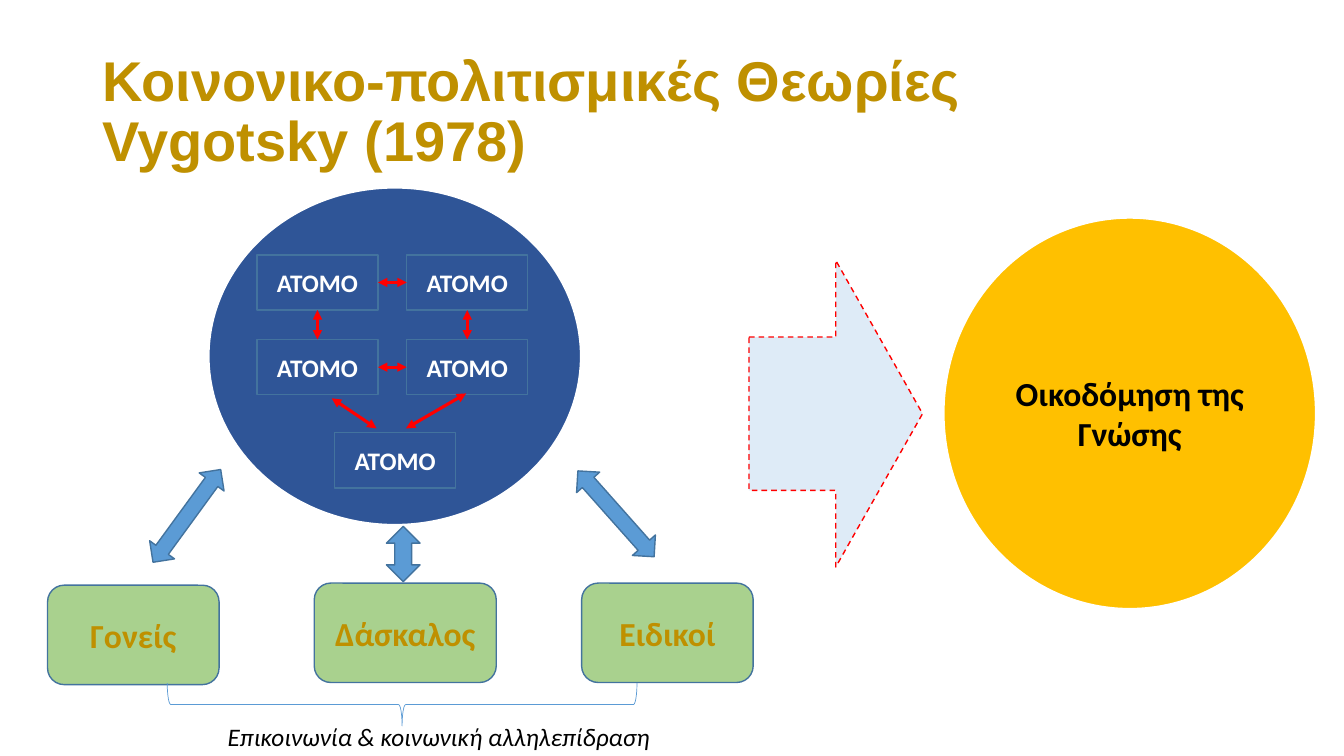
from lxml.etree import SubElement
from pptx import Presentation
from pptx.dml.color import RGBColor
from pptx.enum.dml import MSO_LINE
from pptx.enum.shapes import MSO_CONNECTOR, MSO_SHAPE
from pptx.enum.text import MSO_ANCHOR, PP_ALIGN
from pptx.oxml.ns import qn
from pptx.util import Pt

COLORS = {
    "gold": "BF9000", "black": "000000", "white": "FFFFFF", "navy": "2F5597",
    "edge": "43739E", "red": "FF0000", "green": "A9D18E", "blue": "5B9BD5",
    "pale": "DEEBF7", "amber": "FFC000",
}


def rgb(name):
    return RGBColor.from_string(COLORS[name])


def write(tf, text, size=18, color="black", font="Calibri", bold=False,
          italic=False, align=PP_ALIGN.CENTER, anchor=MSO_ANCHOR.MIDDLE,
          spacing=1.0, wrap=True):
    tf.word_wrap = wrap
    tf.vertical_anchor = anchor
    p = tf.paragraphs[0]
    p.text = text
    p.alignment = align
    p.line_spacing = spacing
    for r in p.runs:
        r.font.size = Pt(size)
        r.font.name = font
        r.font.bold = bold
        r.font.italic = italic
        r.font.color.rgb = rgb(color)


class Diagram:
    """Draws styled elements on one slide; all lengths are in points."""

    def __init__(self, s):
        self.s = s

    def text(self, x, y, w, h, text, **fmt):
        sp = self.s.shapes.add_textbox(Pt(x), Pt(y), Pt(w), Pt(h))
        write(sp.text_frame, text, **fmt)

    def shape(self, kind, x, y, w, h, fill=None, line="edge", width=1,
              dash=None, rotation=0, text=None, **fmt):
        sp = self.s.shapes.add_shape(kind, Pt(x), Pt(y), Pt(w), Pt(h))
        sp.shadow.inherit = False
        sp.rotation = rotation
        if fill:
            sp.fill.solid()
            sp.fill.fore_color.rgb = rgb(fill)
        else:
            sp.fill.background()
        sp.line.color.rgb = rgb(line)
        sp.line.width = Pt(width)
        if dash:
            sp.line.dash_style = dash
        if text:
            write(sp.text_frame, text, bold=True, **fmt)

    def double_arrow(self, x1, y1, x2, y2):
        cx = self.s.shapes.add_connector(
            MSO_CONNECTOR.STRAIGHT, Pt(x1), Pt(y1), Pt(x2), Pt(y2))
        cx.line.color.rgb = rgb("red")
        cx.line.width = Pt(2.25)
        ln = cx.line._get_or_add_ln()
        for end in ("a:headEnd", "a:tailEnd"):
            SubElement(ln, qn(end), type="triangle")
        SubElement(cx._element.spPr, qn("a:effectLst"))


def main():
    prs = Presentation()
    prs.slide_width, prs.slide_height = Pt(960), Pt(540)
    d = Diagram(prs.slides.add_slide(prs.slide_layouts[6]))

    d.text(66, 29, 828, 104, "Κοινονικο-πολιτισμικές Θεωρίες\vVygotsky (1978)",
           size=40, color="gold", font="Arial", bold=True,
           align=PP_ALIGN.LEFT, spacing=0.9)
    d.text(155.5, 512, 320, 29, "Επικοινωνία & κοινωνική αλληλεπίδραση",
           italic=True, align=PP_ALIGN.LEFT, anchor=MSO_ANCHOR.TOP, wrap=False)

    # Group of individuals
    d.shape(MSO_SHAPE.OVAL, 149, 134, 266, 241, "navy", "white", 1.5)
    cols, rows = (183.5, 290.5), (182, 242.5)
    box_w, box_h = 86.5, 39.5
    people = [(x, y) for y in rows for x in cols] + [(239, 309)]
    for x, y in people:
        d.shape(MSO_SHAPE.RECTANGLE, x, y, box_w, box_h, "navy",
                text="ΑΤΟΜΟ", color="white")
    for x in cols:
        mid = x + box_w / 2
        d.double_arrow(mid, rows[0] + box_h, mid, rows[1])
    for y in rows:
        mid = y + box_h / 2
        d.double_arrow(cols[0] + box_w, mid, cols[1], mid)
    d.double_arrow(237, 284.5, 269, 306)
    d.double_arrow(333, 281, 290, 306)

    # Social environment
    for x, y, w, label in ((34, 418, 122.5, "Γονείς"),
                           (415.5, 416.5, 122.5, "Ειδικοί"),
                           (224.5, 416.5, 130, "Δάσκαλος")):
        d.shape(MSO_SHAPE.ROUNDED_RECTANGLE, x, y, w, 71, "green",
                text=label, size=24, color="gold")
    for x, y, w, h, rotation in ((122.5, 327.5, 22, 82, 36.1),
                                 (429, 326, 22, 82, 318.4),
                                 (276, 376, 24, 39.5, 0)):
        d.shape(MSO_SHAPE.UP_DOWN_ARROW, x, y, w, h, "blue", rotation=rotation)
    d.shape(MSO_SHAPE.LEFT_BRACE, 272, 335.5, 30.5, 335.5, line="blue",
            width=0.5, rotation=270)

    # Outcome
    d.shape(MSO_SHAPE.RIGHT_ARROW, 535, 186, 124, 219, "pale", "red",
            dash=MSO_LINE.DASH)
    d.shape(MSO_SHAPE.OVAL, 674, 155.5, 266, 279.5, "amber", "white", 1.5,
            text="Οικοδόμηση της Γνώσης", size=24)

    prs.save("out.pptx")


if __name__ == "__main__":
    main()
